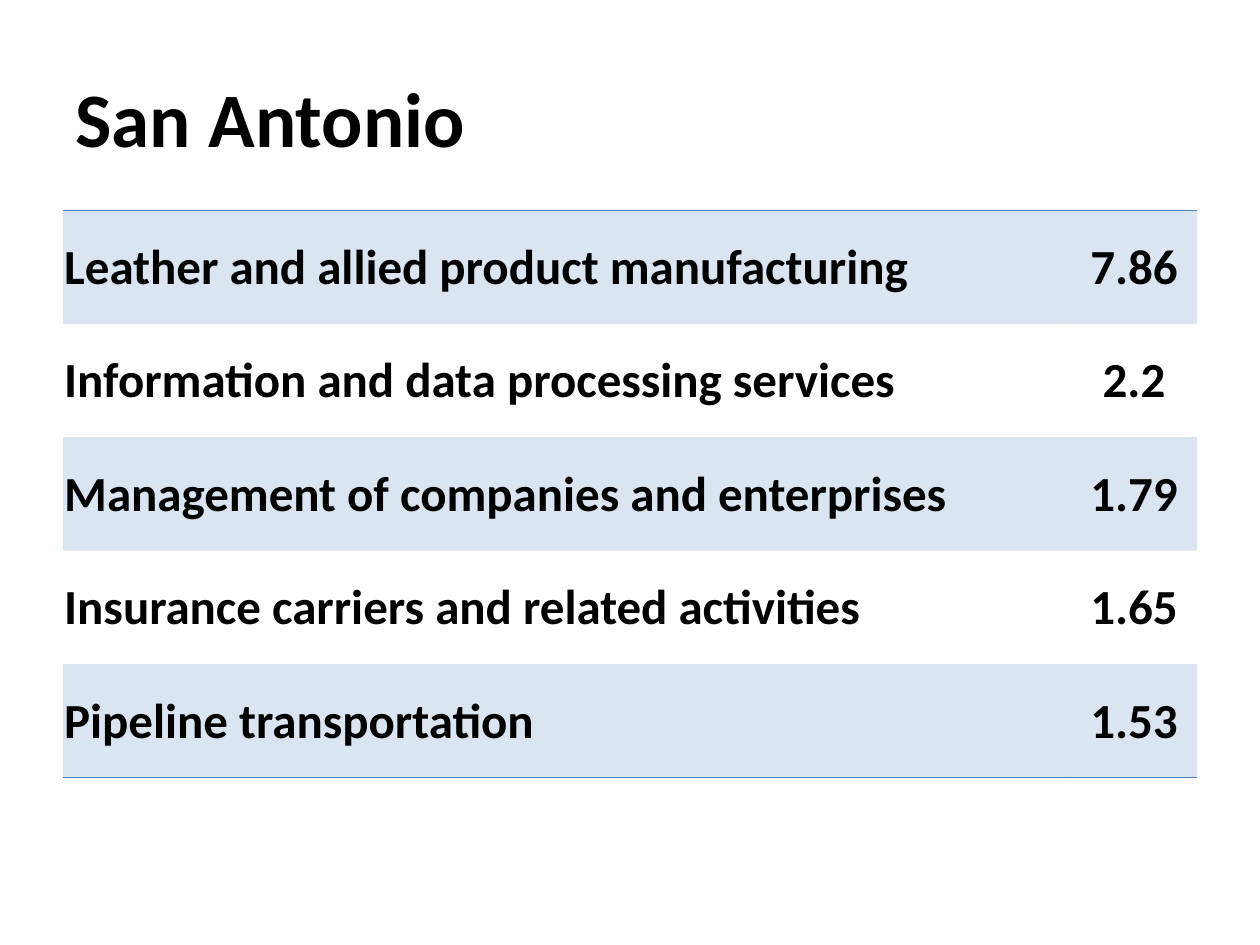
from lxml import etree
from pptx import Presentation
from pptx.dml.color import RGBColor
from pptx.enum.text import MSO_ANCHOR, PP_ALIGN
from pptx.oxml.ns import qn
from pptx.util import Inches, Pt

MIDDLE = MSO_ANCHOR.MIDDLE
LEFT, CENTER = PP_ALIGN.LEFT, PP_ALIGN.CENTER

# Content
TITLE = "San Antonio"
ROWS = [
    ("Leather and allied product manufacturing", "7.86"),
    ("Information and data processing services", "2.2"),
    ("Management of companies and enterprises", "1.79"),
    ("Insurance carriers and related activities", "1.65"),
    ("Pipeline transportation", "1.53"),
]

# Layout and look
EDGE, WIDTH = 0.5, 9
TOP, ROW_H = 1.67, 0.9
COLS = [(8, LEFT), (1, CENTER)]
FONT, BLACK, BLUE = "Calibri", "000000", "4F81BD"
PLAIN = "{2D5ABB26-0587-4C30-8999-92F81FD0307C}"  # no style, no grid


def color(code):
    return RGBColor.from_string(code)


def write(frame, text, size, align):
    frame.text = text
    para = frame.paragraphs[0]
    para.alignment = align
    font = para.runs[0].font
    font.name, font.size, font.bold = FONT, Pt(size), True
    font.color.rgb = color(BLACK)


def tint(cell, code, share):
    cell.fill.solid()
    cell.fill.fore_color.rgb = color(code)
    tone = cell._tc.tcPr.find(f".//{qn('a:srgbClr')}")
    etree.SubElement(tone, qn("a:alpha"), val=str(share * 1000))


def rule(cell, side, code):
    line = etree.Element(qn(f"a:{side}"), w=str(Pt(1)))
    fill = etree.SubElement(line, qn("a:solidFill"))
    etree.SubElement(fill, qn("a:srgbClr"), val=code)
    cell._tc.get_or_add_tcPr().insert(0, line)


prs = Presentation()
prs.slide_width, prs.slide_height = Inches(10), Inches(7.5)
slide = prs.slides.add_slide(prs.slide_layouts[5])

# Title
title = slide.shapes.title
title.left, title.top = Inches(EDGE), Inches(0.3)
title.width, title.height = Inches(WIDTH), Inches(1.25)
title.text_frame.vertical_anchor = MIDDLE
write(title.text_frame, TITLE, 44, LEFT)

# Table
last = len(ROWS) - 1
table = slide.shapes.add_table(
    len(ROWS), len(COLS), Inches(EDGE), Inches(TOP),
    Inches(WIDTH), Inches(ROW_H * len(ROWS))).table
table.first_row = table.horz_banding = False
table._tbl.tblPr.find(qn("a:tableStyleId")).text = PLAIN
for col, (width, _) in zip(table.columns, COLS):
    col.width = Inches(width)

for r, row in enumerate(ROWS):
    table.rows[r].height = Inches(ROW_H)
    for c, (text, (_, align)) in enumerate(zip(row, COLS)):
        cell = table.cell(r, c)
        cell.margin_left = cell.margin_top = cell.margin_right = Inches(0.01)
        cell.margin_bottom = 0
        cell.vertical_anchor = MIDDLE
        write(cell.text_frame, text, 28, align)
        if r % 2 == 0:
            tint(cell, BLUE, 20)
        if r == 0:
            rule(cell, "lnT", BLUE)
        if r == last:
            rule(cell, "lnB", BLUE)

prs.save("out.pptx")
